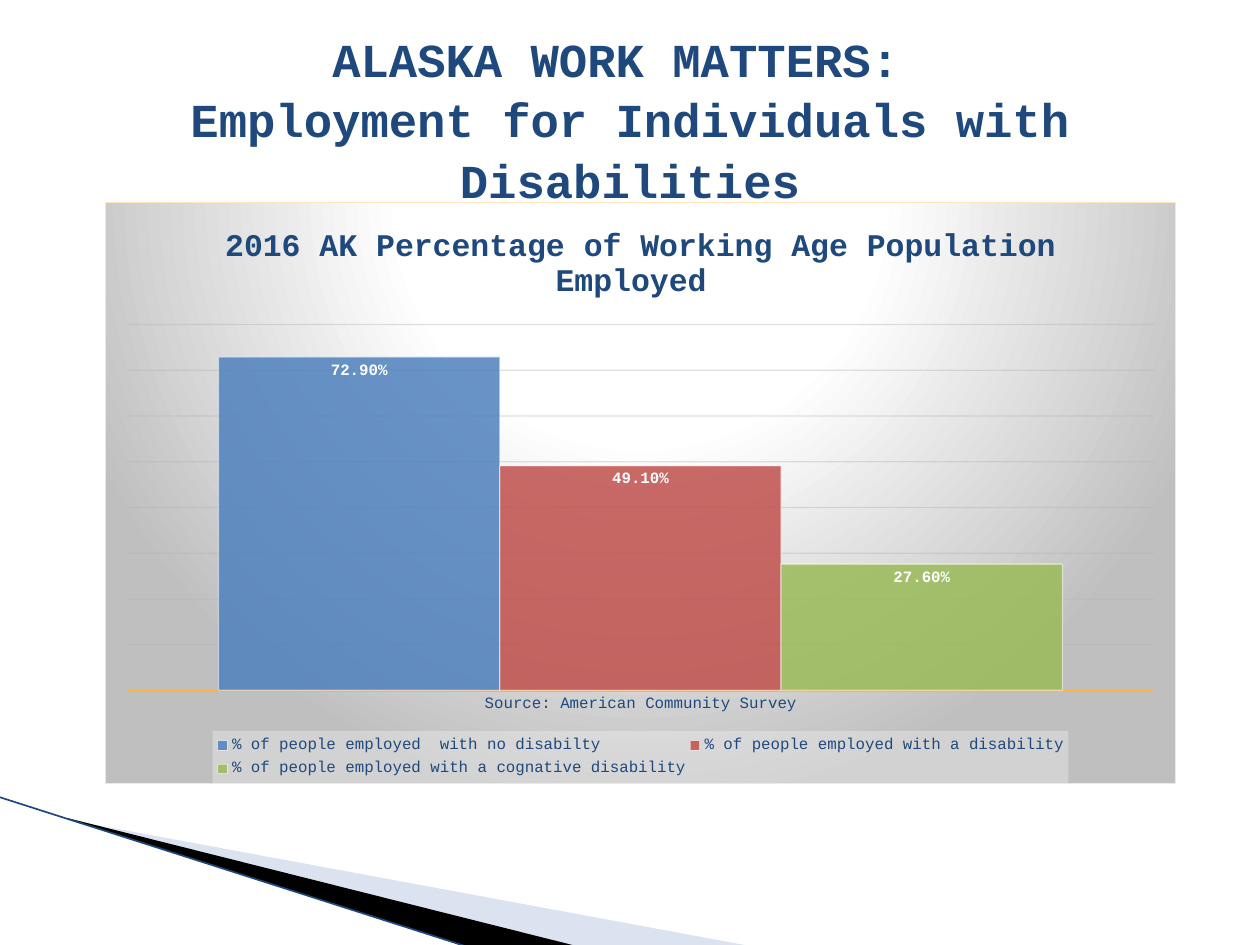
from dataclasses import dataclass

from lxml.etree import SubElement
from pptx import Presentation
from pptx.chart.data import CategoryChartData
from pptx.dml.color import RGBColor
from pptx.enum.chart import XL_CHART_TYPE as ChartType
from pptx.enum.chart import XL_LABEL_POSITION as LabelPosition
from pptx.enum.chart import XL_LEGEND_POSITION as LegendPosition
from pptx.enum.chart import XL_TICK_LABEL_POSITION as TickLabels
from pptx.enum.chart import XL_TICK_MARK as TickMark
from pptx.enum.shapes import MSO_CONNECTOR as Connector
from pptx.enum.text import MSO_ANCHOR as Anchor
from pptx.enum.text import MSO_AUTO_SIZE as AutoSize
from pptx.enum.text import PP_ALIGN as Align
from pptx.oxml import parse_xml
from pptx.oxml.ns import nsdecls, qn
from pptx.util import Pt

PX = 914400 / 126


@dataclass(frozen=True)
class Theme:
    font: str = "Courier New"
    navy: str = "1F497D"
    pale_blue: str = "A7B9DB"
    black: str = "000000"
    white: str = "FFFFFF"
    grid: str = "B2B2B2"
    axis: str = "FFB240"
    border: str = "FFE6BF"
    legend: str = "F2F2F2"
    shade: str = "BFBFBF"
    bars: tuple = ("4F81BD", "C0504D", "9BBB59")
    title_size: int = 27
    chart_title_size: int = 18
    chart_size: int = 10
    label_size: int = 9


def emu(*lengths):
    return [round(length * PX) for length in lengths]


def set_alpha(color, percent):
    SubElement(color, qn("a:alpha")).set("val", str(percent * 1000))


class SlideBuilder:
    def __init__(self, page, theme):
        self.page = page
        self.theme = theme

    def style(self, font, size, color, bold=False):
        font.name = self.theme.font
        font.size = Pt(size)
        font.bold = bold
        font.color.rgb = RGBColor.from_string(color)

    def stroke(self, line, color, width):
        line.color.rgb = RGBColor.from_string(color)
        line.width = Pt(width)

    def title(self, text, left, top, width, height):
        box = self.page.shapes.title
        box.left, box.top, box.width, box.height = emu(left, top, width, height)
        frame = box.text_frame
        frame.text = text
        frame.word_wrap = True
        frame.auto_size = AutoSize.NONE
        frame.vertical_anchor = Anchor.MIDDLE
        para = frame.paragraphs[0]
        para.alignment = Align.CENTER
        para.line_spacing = 1.07
        self.style(para.font, self.theme.title_size, self.theme.navy, True)

    def wedge(self, points, color, opacity=100):
        builder = self.page.shapes.build_freeform(*points[0], scale=PX)
        builder.add_line_segments(points[1:], close=True)
        shape = builder.convert_to_shape()
        shape.shadow.inherit = False
        shape.fill.solid()
        shape.fill.fore_color.rgb = RGBColor.from_string(color)
        shape.line.fill.background()
        if opacity < 100:
            set_alpha(shape._element.xpath("p:spPr/a:solidFill/a:srgbClr")[0], opacity)

    def line(self, start, end, color, width):
        line = self.page.shapes.add_connector(Connector.STRAIGHT, *emu(*start, *end))
        self.stroke(line.line, color, width)
        SubElement(line._element.spPr, qn("a:effectLst"))

    def chart(self, title, category, rows, left, top, width, height):
        data = CategoryChartData(number_format="0.00%")
        data.categories = [category]
        for name, value in rows:
            data.add_series(name, [value])
        chart = self.page.shapes.add_chart(
            ChartType.COLUMN_CLUSTERED, *emu(left, top, width, height), data).chart
        self.style(chart.font, self.theme.chart_size, self.theme.navy)
        chart.has_title = True
        chart.chart_title.include_in_layout = False
        chart.chart_title.text_frame.text = title
        para = chart.chart_title.text_frame.paragraphs[0]
        self.style(para.font, self.theme.chart_title_size, self.theme.navy, True)
        self.columns(chart.plots[0])
        self.axes(chart)
        self.legend(chart)
        self.background(chart)
        # Plot area inside the chart frame
        self.place(chart._chartSpace.xpath(".//c:plotArea")[0], 0.02, 0.21, 0.96, 0.63, inner=True)

    def columns(self, plot):
        plot.gap_width = 65
        plot.overlap = 0
        plot.vary_by_categories = False
        for series, color in zip(plot.series, self.theme.bars):
            series.format.fill.solid()
            series.format.fill.fore_color.rgb = RGBColor.from_string(color)
            self.stroke(series.format.line, self.theme.white, 0.75)
            for part, opacity in zip(series._element.xpath("c:spPr//a:srgbClr"), (85, 50)):
                set_alpha(part, opacity)
            labels = series.data_labels
            labels.show_value = True
            labels.number_format = "0.00%"
            labels.number_format_is_linked = False
            labels.position = LabelPosition.INSIDE_END
            self.style(labels.font, self.theme.label_size, self.theme.white, True)

    def axes(self, chart):
        names, values = chart.category_axis, chart.value_axis
        names.major_tick_mark = names.minor_tick_mark = TickMark.NONE
        names.tick_label_position = TickLabels.NEXT_TO_AXIS
        self.style(names.tick_labels.font, self.theme.label_size, self.theme.navy)
        self.stroke(names.format.line, self.theme.axis, 1.5)
        values.visible = False
        values.minimum_scale, values.maximum_scale, values.major_unit = 0, 0.8, 0.1
        values.has_major_gridlines = True
        self.stroke(values.major_gridlines.format.line, self.theme.grid, 0.75)
        set_alpha(chart._chartSpace.xpath(".//c:majorGridlines//a:srgbClr")[0], 40)

    def legend(self, chart):
        chart.has_legend = True
        legend = chart.legend
        legend.position = LegendPosition.BOTTOM
        legend.include_in_layout = False
        self.style(legend.font, self.theme.label_size, self.theme.navy)
        element = legend._element
        self.place(element, 0.1, 0.91, 0.8, 0.09)
        element.find(qn("c:txPr")).addprevious(parse_xml(
            f'<c:spPr {nsdecls("c", "a")}><a:solidFill><a:srgbClr val="{self.theme.legend}">'
            '<a:alpha val="39000"/></a:srgbClr></a:solidFill></c:spPr>'))

    def place(self, element, x, y, w, h, inner=False):
        for old in element.findall(qn("c:layout")):
            element.remove(old)
        target = '<c:layoutTarget val="inner"/>' if inner else ""
        modes = '<c:xMode val="edge"/><c:yMode val="edge"/>'
        sizes = "".join(f'<c:{key} val="{value}"/>' for key, value in zip("xywh", (x, y, w, h)))
        layout = parse_xml(f'<c:layout {nsdecls("c")}><c:manualLayout>{target}{modes}{sizes}'
                           '</c:manualLayout></c:layout>')
        if inner:
            element.insert(0, layout)
        else:
            element.find(qn("c:legendPos")).addnext(layout)

    def background(self, chart):
        theme = self.theme
        stops = "".join(
            f'<a:gs pos="{place * 1000}"><a:srgbClr val="{color}"/></a:gs>'
            for place, color in ((0, theme.white), (39, theme.white), (100, theme.shade)))
        chart._chartSpace.find(qn("c:chart")).addnext(parse_xml(
            f'<c:spPr {nsdecls("c", "a")}><a:gradFill><a:gsLst>{stops}</a:gsLst>'
            '<a:path path="circle"><a:fillToRect l="50000" t="-80000" r="50000" b="180000"/>'
            f'</a:path></a:gradFill><a:ln w="{Pt(0.75)}"><a:solidFill>'
            f'<a:srgbClr val="{theme.border}"/></a:solidFill></a:ln></c:spPr>'))


def main():
    deck = Presentation()
    deck.slide_width, deck.slide_height = emu(1260, 945)
    theme = Theme()
    slide = SlideBuilder(deck.slides.add_slide(deck.slide_layouts[5]), theme)

    # Corner decoration
    slide.wedge([(69, 820), (750, 946), (575, 946), (69, 819)], theme.pale_blue, 40)
    slide.wedge([(67, 818), (576, 946), (469, 947), (68, 819)], theme.black)
    slide.line((-1, 797), (468, 947), theme.navy, 0.95)

    # Heading
    slide.title("ALASKA WORK MATTERS: \vEmployment for Individuals with Disabilities",
                63, 38, 1134, 158)

    # Employment rates
    slide.chart("2016 AK Percentage of Working Age Population Employed ",
                "Source: American Community Survey",
                [("% of people employed  with no disabilty", 0.729),
                 ("% of people employed with a disability", 0.491),
                 ("% of people employed with a cognative disability", 0.276)],
                105, 202, 1071, 582)

    deck.save("out.pptx")


if __name__ == "__main__":
    main()
